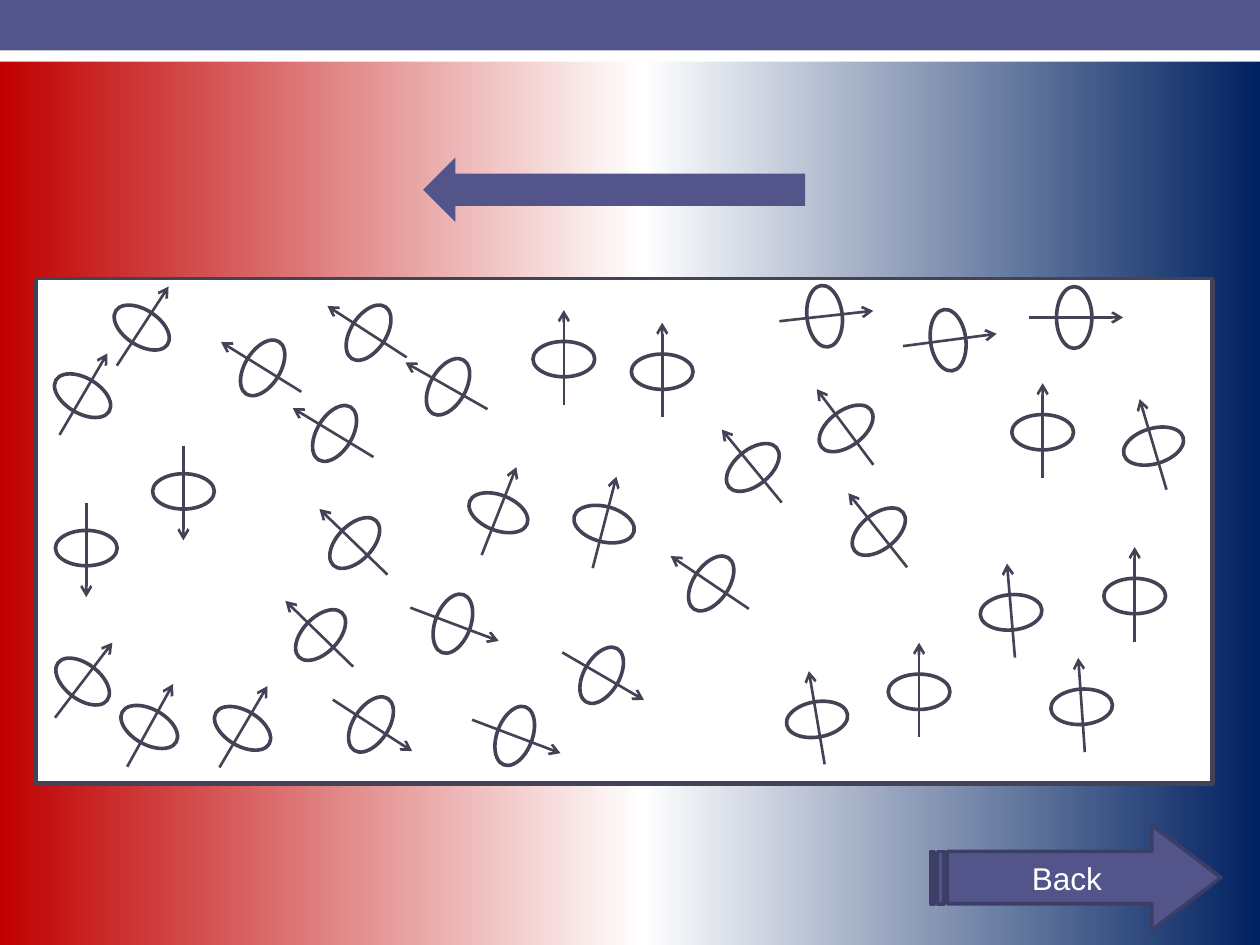
from math import cos, radians, sin
from typing import NamedTuple

from lxml import etree
from pptx import Presentation
from pptx import util as u
from pptx.dml import color
from pptx.enum import shapes, text
from pptx.oxml import ns

WHITE, VIOLET, SLATE, DARK_VIOLET = "FFFFFF", "53548A", "424456", "3D3E66"
RED, NAVY = "C00000", "002060"
BODY_WIDTH, BODY_HEIGHT = 35.3, 20.2
AXIS_LENGTH, AXIS_SHIFT = 54, 1
KIND = shapes.MSO_SHAPE


class Box(NamedTuple):
    left: float
    top: float
    width: float
    height: float


class Spin(NamedTuple):
    x: float
    y: float
    angle: float = 0


SPINS = [
    Spin(47.2, 226.1, 30.4), Spin(81, 187.2, 33.2), Spin(150.1, 210.2, 301.8),
    Spin(191.2, 247.7, 301.2), Spin(210.6, 190.1, 302.9), Spin(256, 221, 299.6),
    Spin(322.2, 205.2), Spin(378.4, 212.4), Spin(471.2, 180.7, 83.7),
    Spin(541.8, 194.4, 82.5), Spin(613.8, 181.4, 90), Spin(595.8, 247),
    Spin(659.2, 254.9, 343.5), Spin(483.5, 244.8, 323.2), Spin(502.2, 303.8, 321.6),
    Spin(49.3, 313.2, 180), Spin(104.8, 280.8, 180), Spin(202.7, 310.3, 314),
    Spin(183.2, 362.9, 314.2), Spin(138.6, 416.2, 30.5), Spin(47.2, 389.5, 37.4),
    Spin(85.3, 415.4, 29), Spin(212, 414, 123), Spin(258.8, 356.4, 110.6),
    Spin(343.8, 385.9, 120.2), Spin(294.1, 420.5, 110.7), Spin(284.8, 293, 21.5),
    Spin(345.2, 299.5, 14.5), Spin(430.2, 267.1, 320.6), Spin(406.4, 333.4, 304),
    Spin(466.9, 411.1, 350.4), Spin(525.2, 395.3), Spin(577.8, 349.9, 355.2),
    Spin(648.4, 340.6), Spin(618.1, 403.9, 356),
]


def rgb(value: str) -> color.RGBColor:
    return color.RGBColor.from_string(value)


def set_gradient(fill, owner, stops: list[tuple[int, str]]) -> None:
    fill.gradient()
    fill.gradient_angle = 0
    stop_list = owner.find(".//" + ns.qn("a:gsLst"))
    for default_stop in list(stop_list):
        stop_list.remove(default_stop)
    for percent, value in stops:
        stop = etree.SubElement(stop_list, ns.qn("a:gs"), pos=str(percent * 1000))
        etree.SubElement(stop, ns.qn("a:srgbClr"), val=value)


def add_block(parent, kind, box: Box, fill: str, line: str = "",
              weight: float = 2.08, angle: float = 0):
    block = parent.add_shape(kind, *(u.Pt(length) for length in box))
    block.shadow.inherit = False
    block.rotation = angle
    block.fill.solid()
    block.fill.fore_color.rgb = rgb(fill)
    if line:
        block.line.color.rgb = rgb(line)
        block.line.width = u.Pt(weight)
    else:
        block.line.fill.background()
    return block


def add_spin(parent, spin: Spin) -> None:
    members = parent.add_group_shape().shapes
    body = Box(spin.x - BODY_WIDTH / 2, spin.y - BODY_HEIGHT / 2, BODY_WIDTH, BODY_HEIGHT)
    add_block(members, KIND.OVAL, body, WHITE, SLATE, angle=spin.angle)
    dx, dy = sin(radians(spin.angle)), -cos(radians(spin.angle))
    tail, tip = AXIS_SHIFT - AXIS_LENGTH / 2, AXIS_SHIFT + AXIS_LENGTH / 2
    ends = [spin.x + tail * dx, spin.y + tail * dy, spin.x + tip * dx, spin.y + tip * dy]
    axis = members.add_connector(shapes.MSO_CONNECTOR.STRAIGHT, *(u.Pt(end) for end in ends))
    axis.line.color.rgb = rgb(SLATE)
    axis.line.width = u.Pt(1.5)
    etree.SubElement(axis.line._get_or_add_ln(), ns.qn("a:tailEnd"), type="arrow")
    etree.SubElement(axis.element.spPr, ns.qn("a:effectLst"))


def main() -> None:
    deck = Presentation()
    deck.slide_width, deck.slide_height = u.Pt(720), u.Pt(540)
    slide = deck.slides.add_slide(deck.slide_layouts[6])
    canvas = slide.shapes
    set_gradient(slide.background.fill, slide.element, [(0, RED), (51, WHITE), (100, NAVY)])

    add_block(canvas, KIND.RECTANGLE, Box(0, 17.3, 720, 18), WHITE)
    add_block(canvas, KIND.RECTANGLE, Box(0, 0, 720, 28.8), VIOLET)

    magnet = add_block(canvas, KIND.RECTANGLE, Box(20.9, 160.6, 671.8, 287.3), WHITE, SLATE, 3)
    set_gradient(magnet.fill, magnet.element, [(23, NAVY), (49, WHITE), (80, RED)])
    add_block(canvas, KIND.RECTANGLE, Box(20.9, 159.1, 671.8, 288), WHITE, SLATE)

    for spin in SPINS:
        add_spin(canvas, spin)

    add_block(canvas, KIND.UP_ARROW, Box(332.6, -0.7, 36.7, 218.2), VIOLET, angle=270)

    back = add_block(canvas, KIND.STRIPED_RIGHT_ARROW, Box(532.1, 471.6, 165.6, 59.8),
                     VIOLET, DARK_VIOLET)
    back.adjustments[0], back.adjustments[1] = 0.5, 0.66
    back.text_frame.vertical_anchor = text.MSO_ANCHOR.MIDDLE
    paragraph = back.text_frame.paragraphs[0]
    paragraph.alignment = text.PP_ALIGN.CENTER
    label = paragraph.add_run()
    label.text = "Back"
    label.font.name = "Arial"
    label.font.size = u.Pt(18)
    label.font.color.rgb = rgb(WHITE)

    deck.save("out.pptx")


if __name__ == "__main__":
    main()
